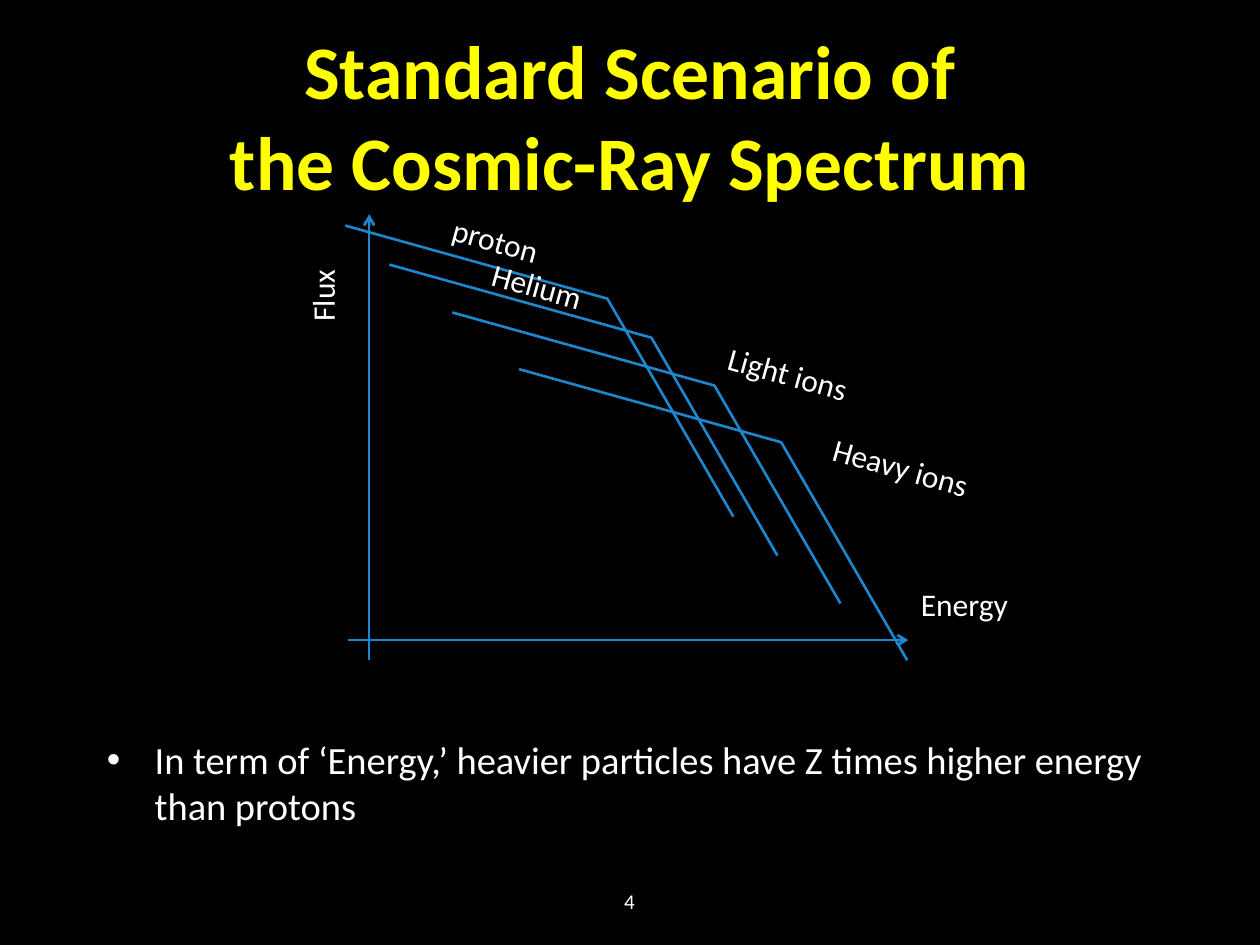
from dataclasses import dataclass

from lxml import etree
from pptx import Presentation
from pptx.dml.color import RGBColor
from pptx.enum import shapes, text
from pptx.oxml import ns
from pptx.util import Inches, Pt


@dataclass(frozen=True)
class Theme:
    font: str = "Calibri"
    background: RGBColor = RGBColor(0, 0, 0)
    title: RGBColor = RGBColor(0xFF, 0xFF, 0)
    ink: RGBColor = RGBColor(0xFF, 0xFF, 0xFF)
    line: RGBColor = RGBColor(0x1D, 0x86, 0xCD)
    title_size: float = 43.2
    body_size: float = 22
    label_size: float = 18
    number_size: float = 12
    line_width: float = 1.5


THEME = Theme()

TITLE = "Standard Scenario of\vthe Cosmic-Ray Spectrum"
BODY = "In term of ‘Energy,’ heavier particles have Z times higher energy than protons"
PAGE_NUMBER = "4"

# Every spectrum has the same shape: a start, a knee and an end.
SPECTRUM_STEPS = [(2.08, 0.58), (3.08, 2.31)]
SPECTRUM_STARTS = [(3.09, 2.1), (2.74, 1.79), (3.59, 2.48), (4.12, 2.93)]

AXES = [((2.76, 5.08), (7.21, 5.08)), ((2.93, 5.24), (2.93, 1.7))]

SLOPE = 15.5
LABELS = [  # wording, left, top, width, rotation
    ("Energy", 7.21, 4.59, 0.97, 0),
    ("Flux", 2.21, 2.1, 0.7, 270),
    ("proton", 3.49, 1.71, 0.92, SLOPE),
    ("Helium", 3.8, 2.08, 1.02, SLOPE),
    ("Light ions", 5.67, 2.78, 1.29, SLOPE),
    ("Heavy ions", 6.5, 3.52, 1.4, SLOPE),
]
LABEL_HEIGHT = 0.4


def add_text(page, wording, place, size, color=THEME.ink, bold=False, wrap=True,
             align=text.PP_ALIGN.LEFT, anchor=text.MSO_ANCHOR.TOP, bullet=False):
    box = page.shapes.add_textbox(*map(Inches, place))
    frame = box.text_frame
    frame.word_wrap = wrap
    frame.vertical_anchor = anchor
    para = frame.paragraphs[0]
    para.text = wording
    para.alignment = align
    if bullet:
        add_bullet(para)
    para.font.name = THEME.font
    para.font.size = Pt(size)
    para.font.bold = bold
    para.font.color.rgb = color
    return box


def add_bullet(para, indent=0.38):
    properties = para._p.get_or_add_pPr()
    properties.set("marL", str(Inches(indent)))
    properties.set("indent", str(Inches(-indent)))
    etree.SubElement(properties, ns.qn("a:buFont"), typeface="Arial")
    etree.SubElement(properties, ns.qn("a:buChar"), char="•")


def style_line(line):
    line.color.rgb = THEME.line
    line.width = Pt(THEME.line_width)


def add_spectrum(page, left, top):
    points = [(Inches(left + dx), Inches(top + dy)) for dx, dy in SPECTRUM_STEPS]
    builder = page.shapes.build_freeform(Inches(left), Inches(top))
    builder.add_line_segments(points, close=False)
    curve = builder.convert_to_shape()
    curve.shadow.inherit = False
    curve.fill.background()
    style_line(curve.line)


def add_axis(page, start, end):
    axis = page.shapes.add_connector(
        shapes.MSO_CONNECTOR.STRAIGHT, *map(Inches, start + end))
    style_line(axis.line)
    etree.SubElement(axis.line._get_or_add_ln(), ns.qn("a:tailEnd"), type="arrow")
    etree.SubElement(axis._element.spPr, ns.qn("a:effectLst"))


def main():
    deck = Presentation()
    deck.slide_width, deck.slide_height = Inches(10), Inches(7.5)
    page = deck.slides.add_slide(deck.slide_layouts[6])
    page.background.fill.solid()
    page.background.fill.fore_color.rgb = THEME.background

    centred = {"align": text.PP_ALIGN.CENTER, "anchor": text.MSO_ANCHOR.MIDDLE}
    add_text(page, TITLE, (0.75, 0.13, 8.5, 1.56), THEME.title_size,
             color=THEME.title, bold=True, **centred)
    add_text(page, BODY, (0.75, 5.79, 8.5, 1.54), THEME.body_size, bullet=True)
    add_text(page, PAGE_NUMBER, (4.62, 6.95, 0.75, 0.4), THEME.number_size, **centred)

    for left, top in SPECTRUM_STARTS:
        add_spectrum(page, left, top)
    for start, end in AXES:
        add_axis(page, start, end)
    for wording, left, top, width, rotation in LABELS:
        label = add_text(page, wording, (left, top, width, LABEL_HEIGHT),
                         THEME.label_size, wrap=False)
        label.text_frame.auto_size = text.MSO_AUTO_SIZE.SHAPE_TO_FIT_TEXT
        label.rotation = rotation

    deck.save("out.pptx")


if __name__ == "__main__":
    main()
